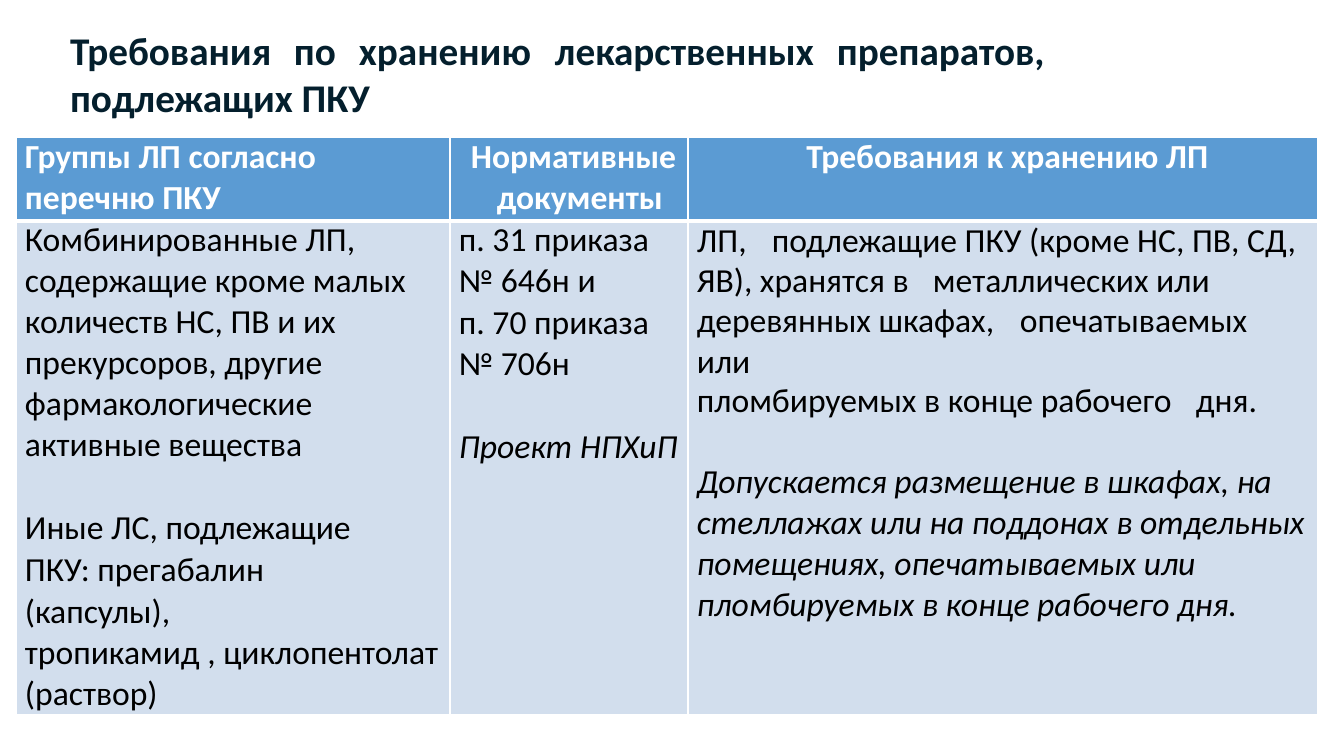
from pptx import Presentation
from pptx.dml.color import RGBColor
from pptx.enum.text import MSO_ANCHOR, PP_ALIGN
from pptx.oxml import parse_xml
from pptx.oxml.ns import nsdecls
from pptx.util import Pt

PX = 9144000 / 1008  # EMU in one px
COLORS = {"title": "041F2D", "header": "5B9BD3", "body": "D2DEED",
          "white": "FFFFFF", "text": "000000"}


def px(n):
    return round(n * PX)


def write(p, text, size, color, bold=False, italic=False, tabs=()):
    p.text = text
    if tabs:
        stops = "".join(f'<a:tab pos="{px(t)}" algn="l"/>' for t in tabs)
        p._p.get_or_add_pPr().append(
            parse_xml(f'<a:tabLst {nsdecls("a")}>{stops}</a:tabLst>'))
    p.space_before = Pt(0)
    for r in p.runs:
        r.font.name = "Calibri"
        r.font.size = Pt(size)
        r.font.bold = bold
        r.font.italic = italic
        r.font.color.rgb = RGBColor.from_string(COLORS[color])


prs = Presentation()
prs.slide_width, prs.slide_height = px(1344), px(756)
slide = prs.slides.add_slide(prs.slide_layouts[5])

# Title
title = slide.shapes.title
title.left, title.top, title.width, title.height = px(69), px(24), px(1219), px(97)
tf = title.text_frame
tf.margin_left, tf.margin_top, tf.margin_right, tf.margin_bottom = px(1), px(2), 0, 0
tf.vertical_anchor = MSO_ANCHOR.TOP
tf.word_wrap = True
p = tf.paragraphs[0]
write(p, "Требования\tпо\tхранению\tлекарственных\tпрепаратов,\vподлежащих ПКУ",
      28, "title", bold=True, tabs=(224, 289, 485, 767))
p.alignment = PP_ALIGN.LEFT

# Table content: body paragraphs are (text, space before, line spacing, italic, tabs)
headers = ["Группы ЛП согласно\vперечню ПКУ",
           "Нормативные\vдокументы",
           "Требования к хранению ЛП"]
bodies = [
    [("Комбинированные ЛП,", 0, Pt(28.2), False, ()),
     ("содержащие кроме малых\vколичеств НС, ПВ и их", 0, 1.0, False, ()),
     ("прекурсоров, другие\vфармакологические\vактивные вещества", 0, 1.0, False, ()),
     ("Иные ЛС, подлежащие\vПКУ: прегабалин\v(капсулы),", 29, 1.03, False, ()),
     ("тропикамид , циклопентолат\v(раствор)", 0, 1.0, False, ())],
    [("п. 31 приказа", 0, Pt(28.2), False, ()),
     ("№ 646н и", 0, 1.0, False, ()),
     ("п. 70 приказа", 1, 1.0, False, ()),
     ("№ 706н", 0, 1.0, False, ()),
     ("Проект НПХиП", 30, 1.0, True, ())],
    [("ЛП,\tподлежащие ПКУ (кроме НС, ПВ, СД,\vЯВ), хранятся в\tметаллических или\v"
      "деревянных шкафах,\tопечатываемых\vили", 0, Pt(28.8), False, (75, 236, 323)),
     ("пломбируемых в конце рабочего\tдня.", 0, Pt(27.9), False, (499,)),
     ("Допускается размещение в шкафах, на\vстеллажах или на поддонах в отдельных\v"
      "помещениях, опечатываемых или", 29, 1.0, True, ()),
     ("пломбируемых в конце рабочего дня.", 0, 1.0, True, ())],
]

# Table
table = slide.shapes.add_table(2, 3, px(16), px(137), px(1302), px(533)).table
table.horz_banding = False
for col, width in zip(table.columns, (434, 238, 630)):
    col.width = px(width)
for row, height in zip(table.rows, (84, 449)):
    row.height = px(height)

for i, (header, body) in enumerate(zip(headers, bodies)):
    head_cell, body_cell = table.cell(0, i), table.cell(1, i)
    write(head_cell.text_frame.paragraphs[0], header, 24, "white", bold=True)
    tf = body_cell.text_frame
    for n, (text, before, spacing, italic, tabs) in enumerate(body):
        p = tf.add_paragraph() if n else tf.paragraphs[0]
        write(p, text, 24, "text", italic=italic, tabs=tabs)
        p.space_before = Pt(before)
        p.line_spacing = spacing

    # Cell margins, borders and fill
    for cell, fill, top, bottom in ((head_cell, "header", 1, 3), (body_cell, "body", 3, 1)):
        cell.margin_left, cell.margin_right = px(9), 0
        cell.margin_top = cell.margin_bottom = 0
        cell.vertical_anchor = MSO_ANCHOR.TOP
        for side, width in (("L", 1), ("R", 1), ("T", top), ("B", bottom)):
            cell._tc.get_or_add_tcPr().append(parse_xml(
                f'<a:ln{side} {nsdecls("a")} w="{Pt(width)}"><a:solidFill>'
                f'<a:srgbClr val="{COLORS["white"]}"/></a:solidFill></a:ln{side}>'))
        cell.fill.solid()
        cell.fill.fore_color.rgb = RGBColor.from_string(COLORS[fill])

# Header alignment: hanging indent in the second column, centred third column
pPr = table.cell(0, 1).text_frame.paragraphs[0]._p.get_or_add_pPr()
pPr.set("marL", str(px(38)))
pPr.set("indent", str(px(-26)))
table.cell(0, 2).text_frame.paragraphs[0].alignment = PP_ALIGN.CENTER

prs.save("out.pptx")
